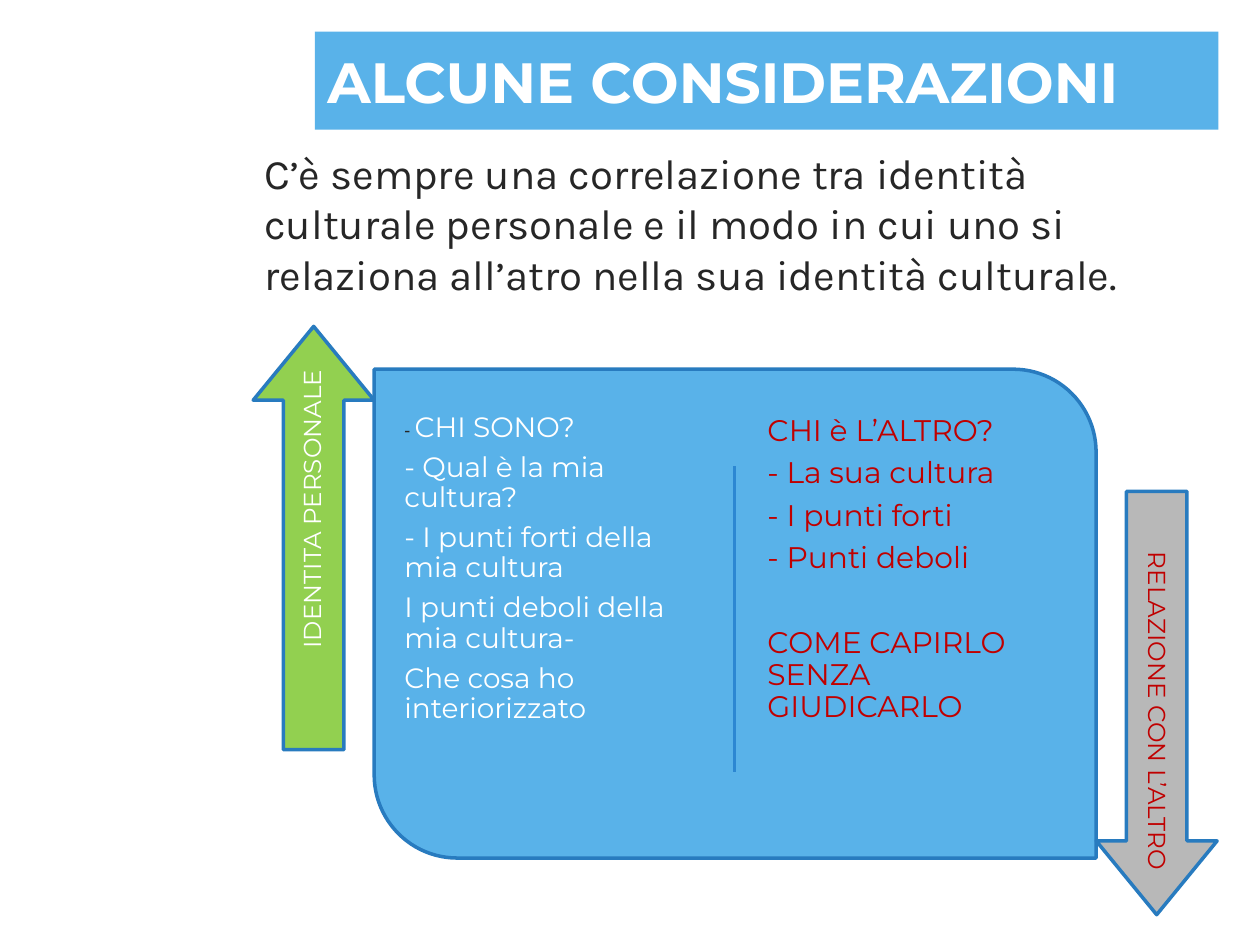
from lxml.etree import SubElement
from pptx import Presentation
from pptx.dml.color import RGBColor as RGB
from pptx.enum.shapes import MSO_CONNECTOR as LINK, MSO_SHAPE as SHAPE
from pptx.enum.text import MSO_ANCHOR as ANCHOR, PP_ALIGN as ALIGN
from pptx.oxml.ns import qn
from pptx.util import Inches, Pt

HUES = {
    "sky": "59B2E9", "edge": "287BBF", "rule": "2C87D2", "green": "92D050",
    "gray": "B8B8B8", "white": "FFFFFF", "dark": "262626", "red": "C00000",
}


class Deck:
    """Holds the slide and the style of its elements."""

    def __init__(self):
        self.prs = Presentation()
        self.prs.slide_width, self.prs.slide_height = Inches(10), Inches(7.5)
        self.slide = self.prs.slides.add_slide(self.prs.slide_layouts[6])
        self.items = self.slide.shapes

    def hue(self, name):
        return RGB.from_string(HUES[name])

    def shape(self, kind, box, fill, edge=None, adj=(), turn=0):
        item = self.items.add_shape(kind, *map(Inches, box))
        item.shadow.inherit = False
        item.rotation = turn
        for i, value in enumerate(adj):
            item.adjustments[i] = value
        item.fill.solid()
        item.fill.fore_color.rgb = self.hue(fill)
        if edge:
            item.line.color.rgb = self.hue(edge)
            item.line.width = Pt(2)
        else:
            item.line.fill.background()
        return item

    def label(self, item, lines, size, hue, face="Montserrat", bold=False,
              inset=None, middle=False, align=ALIGN.LEFT, lead=None, gap=None):
        frame = item.text_frame
        frame.word_wrap = True
        frame.vertical_anchor = ANCHOR.MIDDLE if middle else ANCHOR.TOP
        if inset is not None:
            frame.margin_left = frame.margin_right = Inches(inset)
            frame.margin_top = frame.margin_bottom = Inches(inset)
        frame.text = "\n".join(lines)
        for para in frame.paragraphs:
            para.alignment = align
            para.line_spacing = lead
            if gap:
                para.space_after = Pt(gap)
            for run in para.runs:
                self.style(run, size, hue, face, bold)
        return frame

    def style(self, run, size, hue, face, bold=False):
        run.font.name, run.font.size, run.font.bold = face, Pt(size), bold
        run.font.color.rgb = self.hue(hue)

    def text(self, box, lines, size, hue, turn=0, **opts):
        item = self.items.add_textbox(*map(Inches, box))
        item.rotation = turn
        return self.label(item, lines, size, hue, **opts)

    def line(self, start, end, hue):
        link = self.items.add_connector(
            LINK.STRAIGHT, *map(Inches, start + end))
        link.line.color.rgb = self.hue(hue)
        link.line.width = Pt(2)
        SubElement(link._element.spPr, qn("a:effectLst"))

    def arrow(self, box, fill, turn, words, place, hue):
        self.shape(SHAPE.RIGHT_ARROW, box, fill, "edge", (0.5, 0.61), turn)
        self.text(place, [words], 14, hue, turn, inset=0.06, middle=True,
                  align=ALIGN.RIGHT, lead=0.9)


def main():
    deck = Deck()
    title = deck.shape(SHAPE.RECTANGLE, (2.5, 0.25, 7.17, 0.78), "sky")
    deck.label(title, ["ALCUNE CONSIDERAZIONI"], 32.4, "white", bold=True,
               middle=True)
    deck.text((2, 1.12, 7.67, 1.31), [
        "C’è sempre una correlazione tra identità culturale personale e il "
        "modo in cui uno si relaziona all’atro nella sua identità culturale.",
    ], 24, "dark", face="Karla")

    deck.shape(SHAPE.ROUND_2_DIAG_RECTANGLE, (2.97, 2.93, 5.73, 3.88),
               "sky", "edge", (0, 0.17))
    deck.line((5.83, 3.7), (5.83, 6.13), "rule")
    own = deck.text((3.16, 3.23, 2.48, 3.38), [
        "CHI SONO?",
        "- Qual è la mia cultura?",
        "- I punti forti della mia cultura",
        "I punti deboli della mia cultura-",
        "Che cosa ho interiorizzato",
    ], 16, "white", inset=0.05, lead=0.9, gap=5.6)
    head = own.paragraphs[0]
    head.text = "- "
    deck.style(head.runs[0], 11, "dark", "Calibri")
    run = head.add_run()
    run.text = "CHI SONO?"
    deck.style(run, 16, "white", "Montserrat")

    other = deck.text((6.02, 3.23, 2.48, 3.38), [
        "CHI è L’ALTRO?",
        "- La sua cultura",
        "- I punti forti",
        "- Punti deboli",
        "COME CAPIRLO SENZA GIUDICARLO",
    ], 17, "red", inset=0.07, lead=0.9, gap=5.8)
    other.paragraphs[-1].space_before = Pt(24.4)

    deck.arrow((0.81, 3.79, 3.36, 0.96), "green", 270, "IDENTITA PERSONALE",
               (0.95, 4.17, 3.07, 0.48), "white")
    deck.arrow((7.5, 5.1, 3.36, 0.96), "gray", 90, "RELAZIONE CON L’ALTRO",
               (7.64, 5.19, 3.07, 0.48), "red")
    deck.prs.save("out.pptx")


if __name__ == "__main__":
    main()
